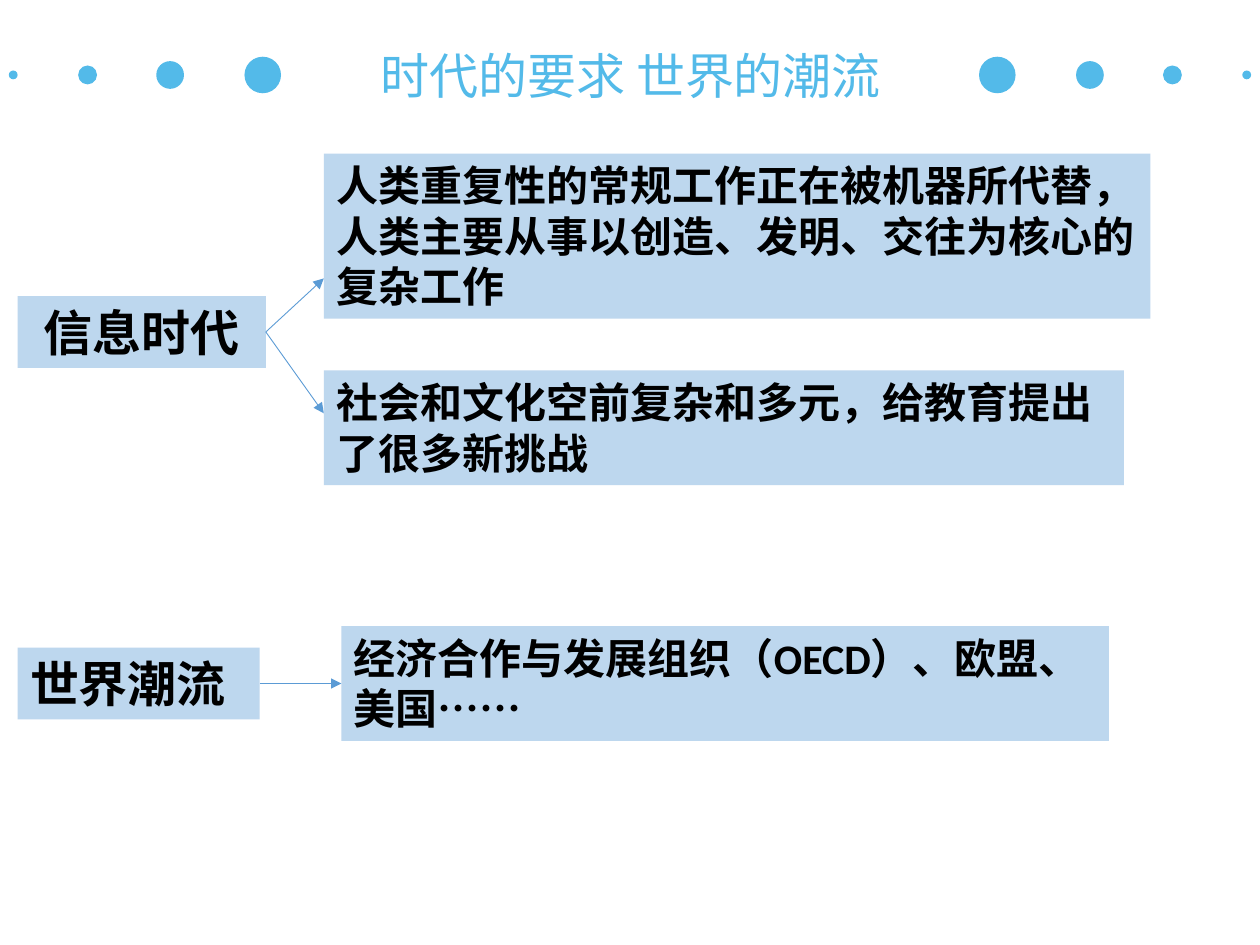
from lxml import etree
from pptx import Presentation
from pptx.dml.color import RGBColor
from pptx.enum.shapes import MSO_CONNECTOR, MSO_SHAPE
from pptx.enum.text import MSO_ANCHOR, MSO_AUTO_SIZE, PP_ALIGN
from pptx.oxml.ns import qn
from pptx.util import Inches, Pt

SKY = RGBColor(0x53, 0xBA, 0xE9)
PALE = RGBColor(0xBD, 0xD7, 0xEE)
ARROW = RGBColor(0x5B, 0x9B, 0xD5)
BLACK = RGBColor(0, 0, 0)
BODY_FONT = "Calibri"
TITLE_FONT = "Noto Sans CJK SC"
STRAIGHT = MSO_CONNECTOR.STRAIGHT
OVAL, RECTANGLE = MSO_SHAPE.OVAL, MSO_SHAPE.RECTANGLE
TOP, MIDDLE = MSO_ANCHOR.TOP, MSO_ANCHOR.MIDDLE
LEFT, CENTER = PP_ALIGN.LEFT, PP_ALIGN.CENTER
GROW = MSO_AUTO_SIZE.SHAPE_TO_FIT_TEXT
LEFT_SIDE, RIGHT_SIDE = 1, 3
COLUMNS, ROWS = 100, 75


class SlideBuilder:
    def __init__(self, deck):
        self.column = deck.slide_width / COLUMNS
        self.row = deck.slide_height / ROWS
        self.slide = deck.slides.add_slide(deck.slide_layouts[6])
        self.shapes = self.slide.shapes

    def place(self, left, top, width, height):
        return (round(left * self.column), round(top * self.row),
                round(width * self.column), round(height * self.row))

    def filled(self, kind, area, color):
        shape = self.shapes.add_shape(kind, *self.place(*area))
        shape.shadow.inherit = False
        shape.fill.solid()
        shape.fill.fore_color.rgb = color
        shape.line.fill.background()
        return shape

    def dot(self, center, middle, size):
        self.filled(OVAL, (center - size / 2, middle - size / 2, size, size), SKY)

    def set_text(self, shape, text, size, font, color, align, anchor, wrap, bold):
        frame = shape.text_frame
        frame.word_wrap = wrap
        frame.auto_size = GROW
        frame.vertical_anchor = anchor
        para = frame.paragraphs[0]
        para.text = text
        para.alignment = align
        para.font.size = Pt(size)
        para.font.name = font
        para.font.bold = bold
        para.font.color.rgb = color

    def title(self, text, area):
        box = self.shapes.add_textbox(*self.place(*area))
        self.set_text(box, text, 28, TITLE_FONT, SKY, CENTER, MIDDLE, False, False)

    def box(self, text, area, size, align=LEFT):
        box = self.filled(RECTANGLE, area, PALE)
        self.set_text(box, text, size, BODY_FONT, BLACK, align, TOP, True, True)
        return box

    def arrow(self, source, target, end_row=None):
        end_y = target.top if end_row is None else round(end_row * self.row)
        line = self.shapes.add_connector(
            STRAIGHT, source.left, source.top, target.left, end_y)
        line.begin_connect(source, RIGHT_SIDE)
        if end_row is None:
            line.end_connect(target, LEFT_SIDE)
        line.line.color.rgb = ARROW
        line.line.width = Pt(0.5)
        etree.SubElement(line.get_or_add_ln(), qn("a:tailEnd"), type="triangle")
        etree.SubElement(line.element.spPr, qn("a:effectLst"))


def main():
    deck = Presentation()
    deck.slide_width, deck.slide_height = Inches(10), Inches(7.5)
    builder = SlideBuilder(deck)

    for margin, size in ((20.85, 2.9), (13.5, 2.2), (6.95, 1.5), (1.05, 0.7)):
        for center in (margin, COLUMNS - margin):
            builder.dot(center, 5.95, size)
    builder.title("时代的要求 世界的潮流", (28.4, 3.1, 43.3, 5.7))

    era = builder.box("信息时代", (1.4, 23.5, 19.7, 5.7), 28, CENTER)
    work = builder.box(
        "人类重复性的常规工作正在被机器所代替，人类主要从事以创造、发明、交往为核心的复杂工作",
        (25.7, 12.2, 65.6, 13.1), 24)
    society = builder.box(
        "社会和文化空前复杂和多元，给教育提出了很多新挑战",
        (25.7, 29.4, 63.5, 9.1), 24)
    trend = builder.box("世界潮流", (1.4, 51.4, 19.2, 5.7), 28)
    members = builder.box(
        "经济合作与发展组织（OECD）、欧盟、美国……",
        (27.1, 49.7, 60.9, 9.1), 24)

    builder.arrow(era, work, 22.1)
    builder.arrow(era, society, 32.8)
    builder.arrow(trend, members)
    deck.save("out.pptx")


if __name__ == "__main__":
    main()
